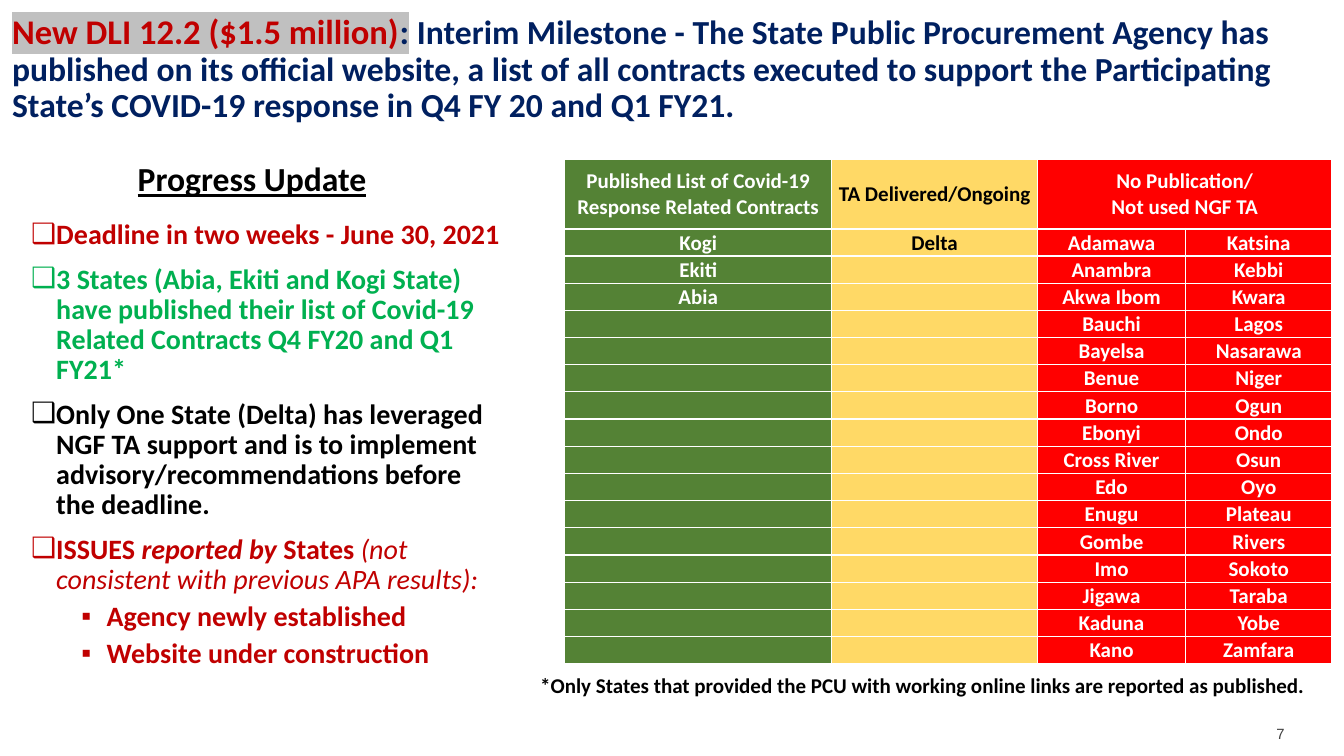
from dataclasses import dataclass
from itertools import zip_longest

from lxml import etree
from pptx import Presentation
from pptx.dml.color import RGBColor
from pptx.enum import text
from pptx.oxml import ns
from pptx import util as u


@dataclass(frozen=True)
class Theme:
    font: str = "Calibri"
    number_font: str = "Arial"
    navy: str = "002060"
    crimson: str = "C00000"
    bright_green: str = "00B050"
    black: str = "000000"
    white: str = "FFFFFF"
    gray: str = "404040"
    highlight: str = "C0C0C0"
    published: str = "548235"
    assisted: str = "FFD966"
    missing: str = "FF0000"
    lead: float = 24.7
    title: float = 24
    body: float = 20
    small: float = 15
    number: float = 10.6


def add_xml(parent, tag, **attrs):
    return etree.SubElement(parent, ns.qn(tag), attrs)


class Deck:
    def __init__(self, theme):
        self.t = theme
        self.prs = Presentation()
        self.prs.slide_width, self.prs.slide_height = u.Inches(13.33), u.Inches(7.5)
        self.s = self.prs.slides.add_slide(self.prs.slide_layouts[6])

    def style(self, font, size=None, color=None, name=None, **flags):
        if size:
            font.size = u.Pt(size)
            font.name = name or self.t.font
        if color:
            font.color.rgb = RGBColor.from_string(color)
        for flag, value in flags.items():
            setattr(font, flag, value)

    def textbox(self, x, y, w, h, margins=(0.1, 0.05, 0.1, 0.05)):
        sp = self.s.shapes.add_textbox(*map(u.Inches, (x, y, w, h)))
        tf = sp.text_frame
        tf.word_wrap = True
        tf.margin_left, tf.margin_top, tf.margin_right, tf.margin_bottom = map(u.Inches, margins)
        return tf

    def label(self, box, words, size, color, align=None, margins=(0.1, 0.05, 0.1, 0.05), **font):
        p = self.textbox(*box, margins).paragraphs[0]
        p.text = words
        p.alignment = align
        self.style(p.font, size, color, **font)

    def title(self, box, runs):
        """Each run is (words, size, colour, highlighted)."""
        p = self.textbox(*box, (0, 0, 0, 0)).paragraphs[0]
        p.line_spacing = 0.9
        for words, size, color, highlighted in runs:
            r = p.add_run()
            r.text = words
            self.style(r.font, size, color, bold=True)
            if highlighted:
                mark = etree.Element(ns.qn("a:highlight"))
                add_xml(mark, "a:srgbClr", val=self.t.highlight)
                r.font._element.find(ns.qn("a:solidFill")).addnext(mark)

    def bullets(self, box, items):
        """Each item is (level, colour, runs); a run is (words, bold, italic)."""
        tf = self.textbox(*box)
        for i, (level, color, runs) in enumerate(items):
            p = tf.paragraphs[0] if i == 0 else tf.add_paragraph()
            p.level = level
            p.line_spacing = 0.9
            p.space_before = u.Pt(5 if level else 10)
            pPr = p._p.get_or_add_pPr()
            pPr.set("marL", str(u.Inches(0.25 + 0.5 * level)))
            pPr.set("indent", str(u.Inches(-0.25)))
            add_xml(pPr, "a:buFont", typeface="Arial")
            add_xml(pPr, "a:buChar", char="▪" if level else "❑")
            for words, bold, italic in runs:
                r = p.add_run()
                r.text = words
                self.style(r.font, self.t.body, color, bold=bold, italic=italic)

    def cell(self, cell, words, fill, color, top, bottom):
        """Fills one table cell; top and bottom are border widths in points."""
        cell.fill.solid()
        cell.fill.fore_color.rgb = RGBColor.from_string(fill)
        cell.vertical_anchor = text.MSO_ANCHOR.MIDDLE
        cell.margin_left = cell.margin_right = cell.margin_top = u.Inches(0.01)
        cell.margin_bottom = 0
        cell.text = words
        for p in cell.text_frame.paragraphs:
            p.alignment = text.PP_ALIGN.CENTER
            self.style(p.font, self.t.small, color, bold=True)
            if not words:
                add_xml(p._p, "a:endParaRPr", sz=str(self.t.small * 100))
        tcPr = cell._tc.get_or_add_tcPr()
        for i, (side, width) in enumerate(zip("LRTB", (1, 1, top, bottom))):
            ln = etree.Element(ns.qn(f"a:ln{side}"), w=str(u.Pt(width)))
            add_xml(add_xml(ln, "a:solidFill"), "a:srgbClr", val=self.t.white)
            tcPr.insert(i, ln)

    def table(self, x, y, widths, heights, rows, fills, colors):
        box = map(u.Inches, (x, y, sum(widths), sum(heights)))
        tbl = self.s.shapes.add_table(len(rows), len(widths), *box).table
        for column, width in zip(tbl.columns, widths):
            column.width = u.Inches(width)
        for row, height in zip(tbl.rows, heights):
            row.height = u.Inches(height)
        for i, row in enumerate(rows):
            top, bottom = (1.5 if i in (1, 2) else 1), (1.5 if i < 2 else 1)
            for j, words in enumerate(row):
                self.cell(tbl.cell(i, j), words, fills[j], colors[j], top, bottom)
        return tbl


def main():
    t = Theme()
    d = Deck(t)
    d.title((0.12, 0.15, 12.9, 1.1), [
        ("New DLI 12.2 ($1.5 million)", t.lead, t.crimson, True),
        (":", t.lead, t.navy, True),
        (" ", t.lead, t.navy, False),
        ("Interim Milestone - The State Public Procurement Agency has published on its "
         "official website, a list of all contracts executed to support the Participating "
         "State’s COVID-19 response in Q4 FY 20 and Q1 FY21.", t.title, t.navy, False),
    ])
    d.bullets((0.21, 2.14, 4.87, 3.81), [
        (0, t.crimson, [("Deadline in two weeks - June 30, 2021", True, False)]),
        (0, t.bright_green, [("3 States (Abia, Ekiti and Kogi State) have published their list of "
                              "Covid-19 Related Contracts Q4 FY20 and Q1 FY21*", True, False)]),
        (0, t.black, [("Only One State (Delta) has leveraged NGF TA support and is to implement "
                       "advisory/recommendations before the deadline.", True, False)]),
        (0, t.crimson, [("ISSUES", True, False), (" reported by ", True, True),
                        ("States ", True, False),
                        ("(not consistent with previous APA results):", False, True)]),
        (1, t.crimson, [("Agency newly established", True, False)]),
        (1, t.crimson, [("Website under construction", True, False)]),
    ])

    published = ["Kogi", "Ekiti", "Abia"]
    assisted = ["Delta"]
    missing = ["Adamawa", "Anambra", "Akwa Ibom", "Bauchi", "Bayelsa", "Benue", "Borno", "Ebonyi",
               "Cross River", "Edo", "Enugu", "Gombe", "Imo", "Jigawa", "Kaduna", "Kano",
               "Katsina", "Kebbi", "Kwara", "Lagos", "Nasarawa", "Niger", "Ogun", "Ondo",
               "Osun", "Oyo", "Plateau", "Rivers", "Sokoto", "Taraba", "Yobe", "Zamfara"]
    half = len(missing) // 2
    header = ("Published List of Covid-19 Response Related Contracts", "TA Delivered/Ongoing",
              "No Publication/\nNot used NGF TA", "")
    states = zip_longest(published, assisted, missing[:half], missing[half:], fillvalue="")
    tbl = d.table(5.6, 1.58, (2.65, 2.04, 1.47, 1.45), [0.69] + [0.27] * half,
                  [header, *states],
                  (t.published, t.assisted, t.missing, t.missing),
                  (t.white, t.black, t.white, t.white))
    tbl.cell(0, 2).merge(tbl.cell(0, 3))

    d.label((0.63, 1.52, 3.74, 0.5), "Progress Update", t.title, t.black,
            text.PP_ALIGN.CENTER, bold=True, underline=True)
    d.label((12.66, 7.16, 0.28, 0.21), "7", t.number, t.gray,
            margins=(0, 0.03, 0, 0), name=t.number_font)
    d.label((5.26, 6.62, 8.07, 0.35),
            "*Only States that provided the PCU with working online links are reported as published.",
            t.small, t.black, bold=True)
    d.prs.save("out.pptx")


if __name__ == "__main__":
    main()
